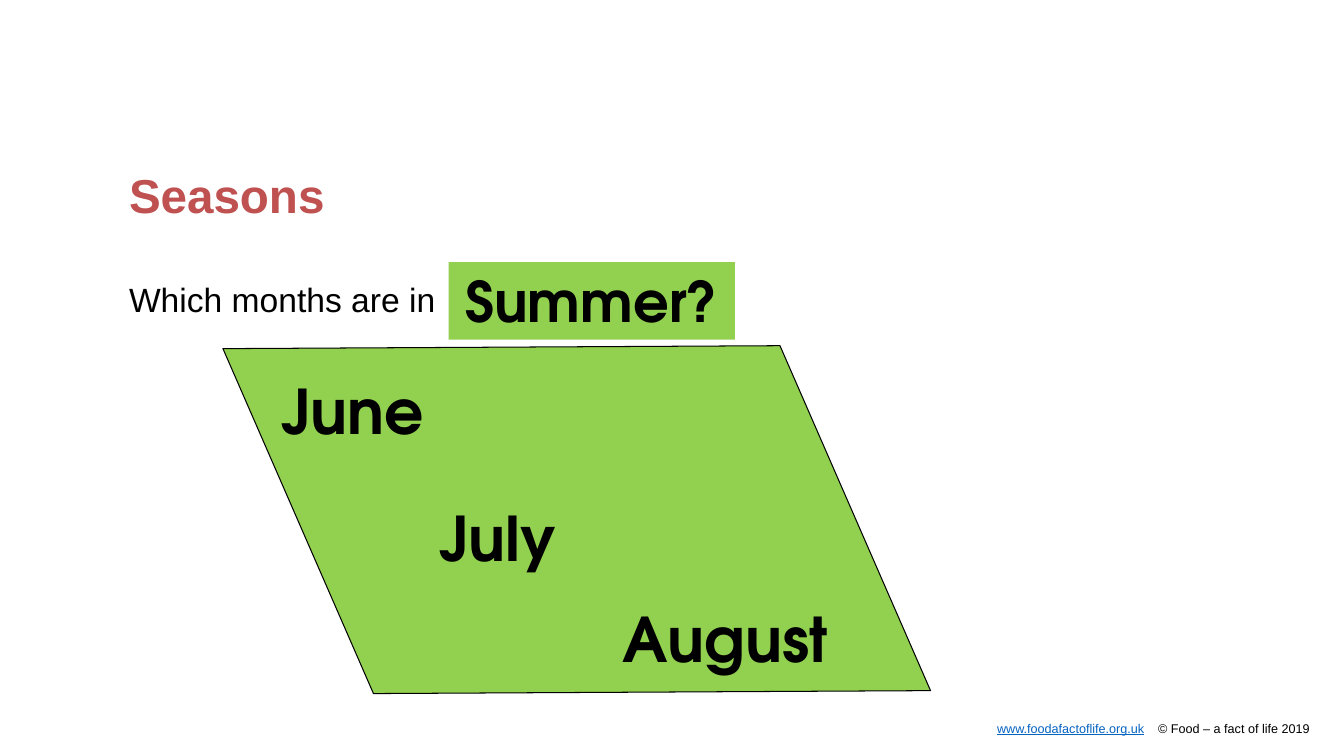
from dataclasses import dataclass

from pptx import Presentation
from pptx import util as u
from pptx.dml.color import RGBColor
from pptx.enum import shapes, text

PX = 9144


@dataclass(frozen=True)
class Theme:
    body_font: str = "Arial"
    display_font: str = "TeX Gyre Adventor"
    black: str = "000000"
    title: str = "BF5150"
    link: str = "0563C1"
    summer: str = "92D050"
    footer_size: int = 9
    question_size: int = 24
    title_size: int = 34
    season_size: int = 40
    month_size: int = 44


THEME = Theme()


def px(*lengths):
    return [u.Emu(length * PX) for length in lengths]


def style(font, name, size, color, bold=False):
    font.name = name
    font.size = u.Pt(size)
    font.bold = bold
    font.color.rgb = RGBColor.from_string(color)


def fill_summer(shape):
    shape.shadow.inherit = False
    shape.fill.solid()
    shape.fill.fore_color.rgb = RGBColor.from_string(THEME.summer)


def add_body_text(slide, box, size, color, wording="", bold=False):
    frame = slide.shapes.add_textbox(*px(*box)).text_frame
    frame.word_wrap = True
    frame.margin_left = frame.margin_right = 0
    frame.margin_top = frame.margin_bottom = 0
    paragraph = frame.paragraphs[0]
    paragraph.text = wording
    style(paragraph.font, THEME.body_font, size, color, bold)
    return paragraph


def add_display_text(slide, box, wording, size, filled=False, align=text.PP_ALIGN.LEFT):
    if filled:
        shape = slide.shapes.add_shape(shapes.MSO_SHAPE.RECTANGLE, *px(*box))
        fill_summer(shape)
        shape.line.fill.background()
    else:
        shape = slide.shapes.add_textbox(*px(*box))
    frame = shape.text_frame
    frame.word_wrap = True
    frame.auto_size = text.MSO_AUTO_SIZE.SHAPE_TO_FIT_TEXT
    frame.vertical_anchor = text.MSO_ANCHOR.TOP
    paragraph = frame.paragraphs[0]
    paragraph.text = wording
    paragraph.alignment = align
    style(paragraph.font, THEME.display_font, size, THEME.black, True)


def add_month_panel(slide):
    panel = slide.shapes.add_shape(
        shapes.MSO_SHAPE.PARALLELOGRAM, *px(222, 344, 700, 343))
    panel.adjustments[0] = 0.43
    panel.rotation = 179.7
    panel.element.spPr.xfrm.set("flipH", "1")
    fill_summer(panel)
    panel.line.color.rgb = RGBColor.from_string(THEME.black)
    panel.line.width = u.Pt(0.75)


def add_footer(slide):
    paragraph = add_body_text(slide, (126, 715, 1173, 15), THEME.footer_size, THEME.black)
    paragraph.alignment = text.PP_ALIGN.RIGHT
    link = paragraph.add_run()
    link.text = "www.foodafactoflife.org.uk"
    link.font.underline = True
    link.font.color.rgb = RGBColor.from_string(THEME.link)
    gap = paragraph.add_run()
    gap.text = " "
    gap.font._element.set("spc", "750")
    paragraph.add_run().text = "© Food – a fact of life 2019"


def main():
    presentation = Presentation()
    presentation.slide_width, presentation.slide_height = px(1333, 750)
    slide = presentation.slides.add_slide(presentation.slide_layouts[6])

    add_footer(slide)
    heading = add_body_text(slide, (128, 171, 1063, 79), THEME.title_size,
                            THEME.title, "Seasons", True)
    question = add_body_text(slide, (128, 281, 1063, 394), THEME.question_size,
                             THEME.black, "Which months are in")
    for paragraph in (heading, question):
        paragraph.line_spacing = 0.9

    add_display_text(slide, (445, 260, 284, 77), "Summer?", THEME.season_size,
                     filled=True, align=text.PP_ALIGN.CENTER)
    add_month_panel(slide)
    months = [
        ("June", (269, 365, 496, 83), True),
        ("August", (608, 591, 240, 83), False),
        ("July", (426, 491, 496, 83), False),
    ]
    for month, box, filled in months:
        add_display_text(slide, box, month, THEME.month_size, filled)

    presentation.save("out.pptx")


if __name__ == "__main__":
    main()
